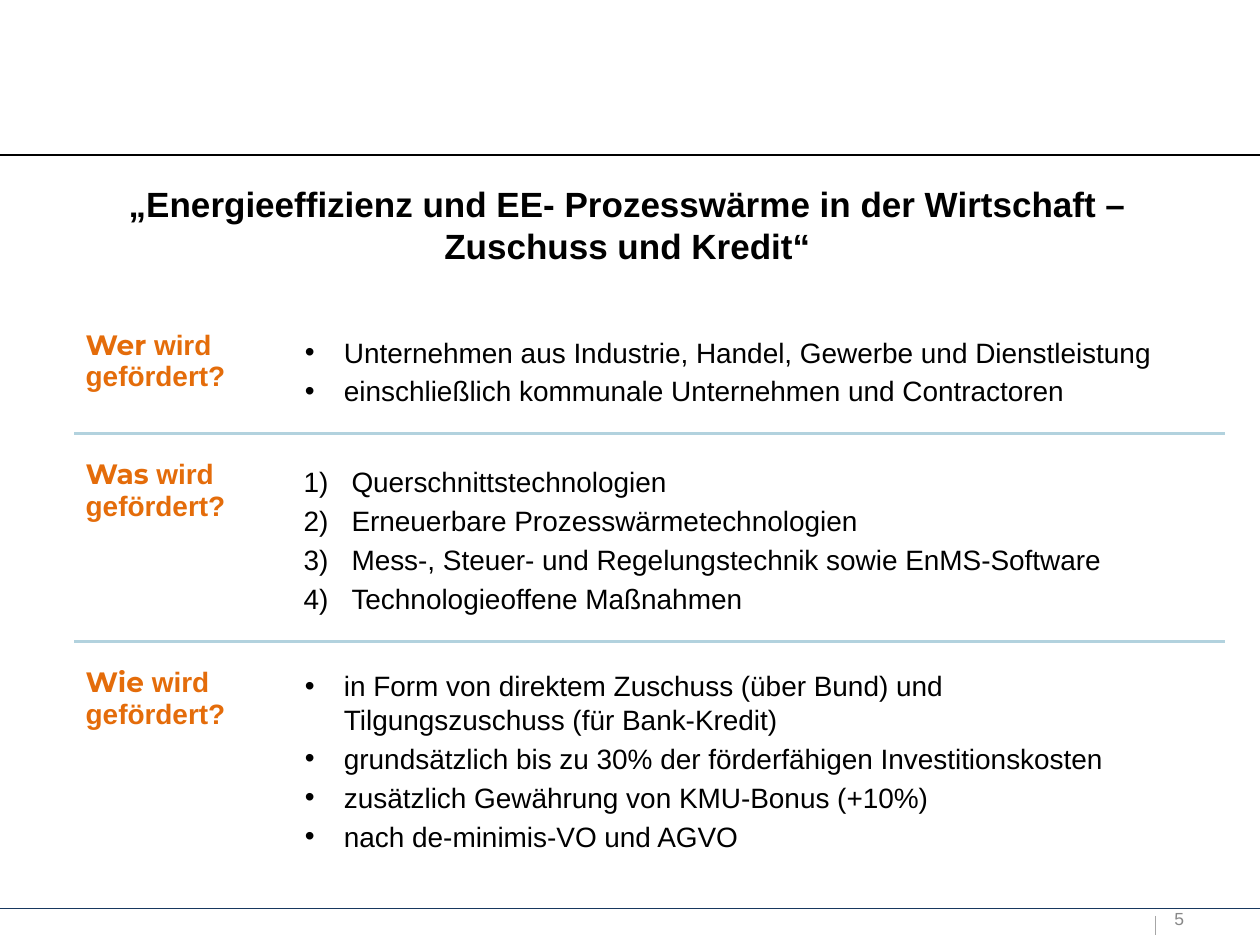
from lxml import etree
from pptx import Presentation
from pptx.dml.color import RGBColor
from pptx.enum.shapes import MSO_CONNECTOR
from pptx.enum.text import PP_ALIGN
from pptx.oxml.ns import qn
from pptx.util import Emu, Inches, Pt

STRAIGHT = MSO_CONNECTOR.STRAIGHT
LEFT, CENTER = PP_ALIGN.LEFT, PP_ALIGN.CENTER

SECTIONS = [
    ("Wer", 2.62, 2.62, "bullet", [
        "Unternehmen aus Industrie, Handel, Gewerbe und Dienstleistung",
        "einschließlich kommunale Unternehmen und Contractoren",
    ]),
    ("Was", 3.65, 3.65, "number", [
        "Querschnittstechnologien",
        "Erneuerbare Prozesswärmetechnologien",
        "Mess-, Steuer- und Regelungstechnik sowie EnMS-Software",
        "Technologieoffene Maßnahmen",
    ]),
    ("Wie", 5.3, 5.27, "bullet", [
        "in Form von direktem Zuschuss (über Bund) und \nTilgungszuschuss (für Bank-Kredit)",
        "grundsätzlich bis zu 30% der förderfähigen Investitionskosten",
        "zusätzlich Gewährung von KMU-Bonus (+10%)",
        "nach de-minimis-VO und AGVO",
    ]),
]


def color(value):
    return RGBColor.from_string(value)


def write(para, text, size=16, font="Arial", fill="000000", bold=False):
    for index, line in enumerate(text.split("\n")):
        if index:
            para.add_line_break()
            line_break = para._p.findall(qn("a:br"))[-1]
            etree.SubElement(line_break, qn("a:rPr"), sz=str(size * 100))
        span = para.add_run()
        span.text = line
        span.font.size = Pt(size)
        span.font.name = font
        span.font.bold = bold
        span.font.color.rgb = color(fill)


class Sheet:
    """Holds the deck's style and the current page, placed on a 10 by 7.5 grid."""

    columns, rows = 10, 7.5
    accent, rule, gray = "E46C0A", "B2D2DE", "888888"
    markers = {
        "bullet": ("a:buChar", {"char": "•"}, 0.41, -0.31),
        "number": ("a:buAutoNum", {"type": "arabicParenR"}, 0.47, -0.38),
    }

    def __init__(self, deck):
        self.width = deck.slide_width = Inches(10)
        self.height = deck.slide_height = Inches(7.5)
        self.page = deck.slides.add_slide(deck.slide_layouts[6])

    def x(self, column):
        return Emu(round(self.width * column / self.columns))

    def y(self, row):
        return Emu(round(self.height * row / self.rows))

    def line(self, start, end, fill, weight=0.75):
        connector = self.page.shapes.add_connector(
            STRAIGHT, self.x(start[0]), self.y(start[1]), self.x(end[0]), self.y(end[1]))
        connector.line.color.rgb = color(fill)
        connector.line.width = Pt(weight)
        etree.SubElement(connector._element.spPr, qn("a:effectLst"))

    def text(self, left, top, width, height, inset=(0, 0), align=LEFT):
        box = self.page.shapes.add_textbox(
            self.x(left), self.y(top), self.x(width), self.y(height))
        frame = box.text_frame
        frame.word_wrap = True
        frame.margin_left = frame.margin_right = Inches(inset[0])
        frame.margin_top = frame.margin_bottom = Inches(inset[1])
        frame.paragraphs[0].alignment = align
        return frame

    def title(self, text):
        frame = self.text(0.53, 1.4, 8.9, 0.77, inset=(0.1, 0.05), align=CENTER)
        write(frame.paragraphs[0], text, size=20, bold=True)

    def question(self, word, top):
        para = self.text(0.59, top, 2.99, 0.5).paragraphs[0]
        para.line_spacing = 0.93
        para._p.get_or_add_pPr().set("marL", str(Inches(0.09)))
        write(para, word, font="Montserrat", fill=self.accent, bold=True)
        write(para, " wird \ngefördert?", fill=self.accent, bold=True)

    def answers(self, items, top, marker):
        tag, attributes, margin, indent = self.markers[marker]
        frame = self.text(2.32, top + 0.04, 7.17, 0.3 * len(items))
        for index, item in enumerate(items):
            para = frame.add_paragraph() if index else frame.paragraphs[0]
            if index:
                para.space_before = Pt(3)
            properties = para._p.get_or_add_pPr()
            properties.set("marL", str(Inches(margin)))
            properties.set("indent", str(Inches(indent)))
            etree.SubElement(properties, qn("a:buFont"), typeface="Arial")
            etree.SubElement(properties, qn(tag), attributes)
            write(para, item)

    def page_number(self, number):
        frame = self.text(9.32, 7.21, 0.64, 0.17)
        write(frame.paragraphs[0], number, size=10, fill=self.gray)


def main():
    deck = Presentation()
    sheet = Sheet(deck)
    sheet.line((0, 1.23), (10, 1.23), "000000")
    sheet.line((0, 7.21), (10, 7.21), "17375E")
    sheet.line((9.17, 7.27), (9.17, 7.42), "A6A6A6")
    sheet.page_number("5")
    sheet.title("„Energieeffizienz und EE- Prozesswärme in der Wirtschaft – Zuschuss und Kredit“")
    for word, question_top, answer_top, marker, items in SECTIONS:
        sheet.question(word, question_top)
        sheet.answers(items, answer_top, marker)
    for row in (3.44, 5.09):
        sheet.line((0.59, row), (9.72, row), sheet.rule, 1.75)
    deck.save("out.pptx")


if __name__ == "__main__":
    main()
